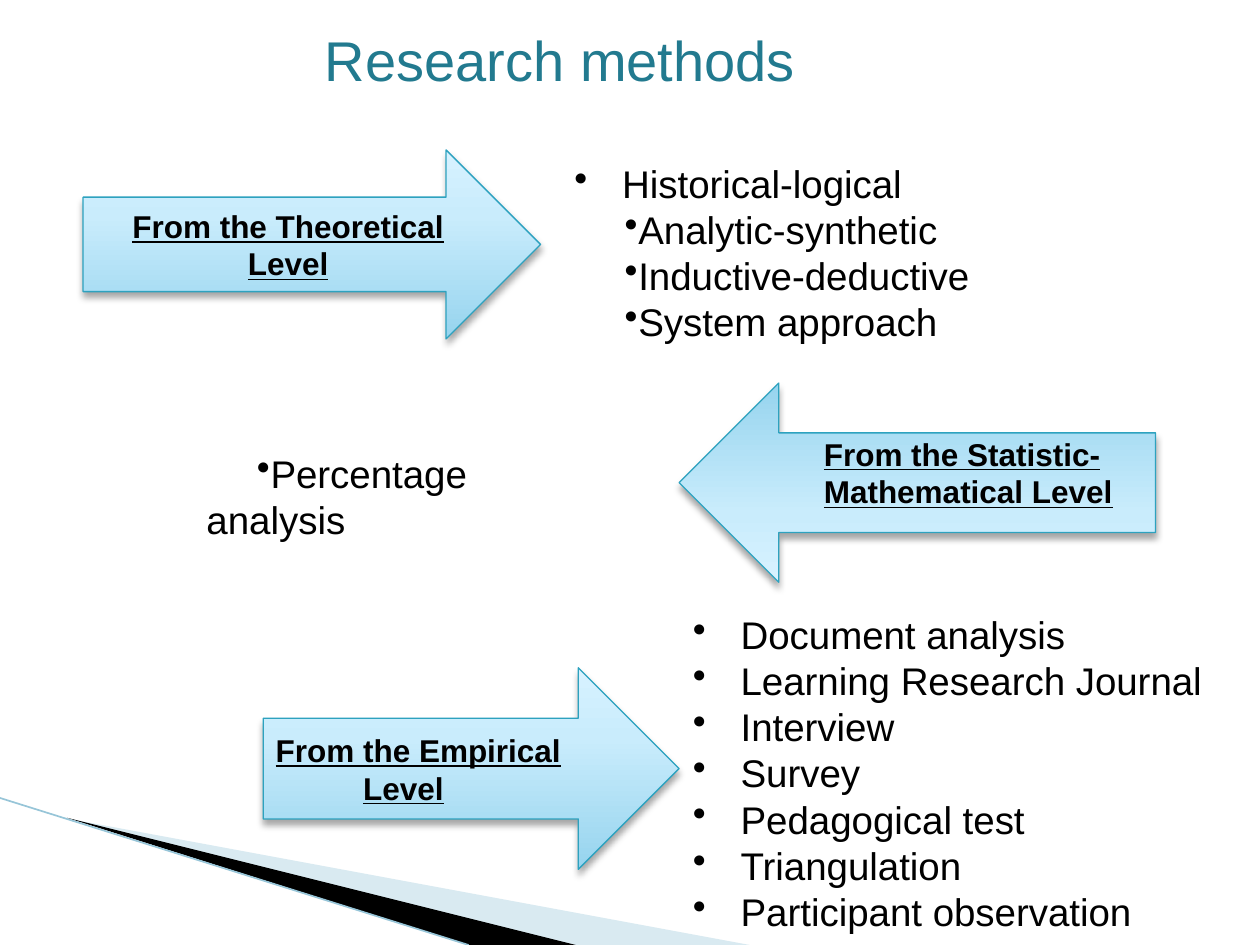
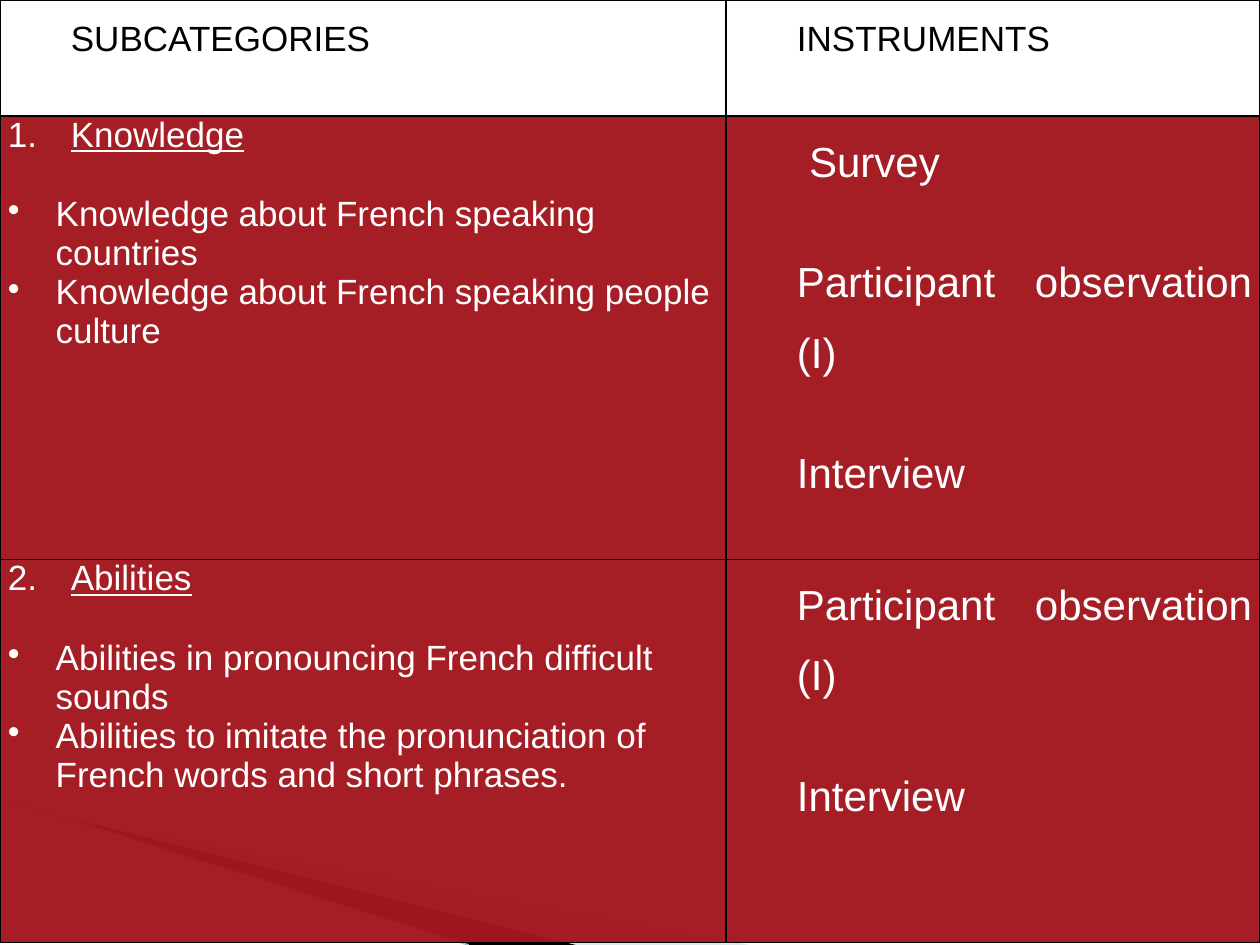
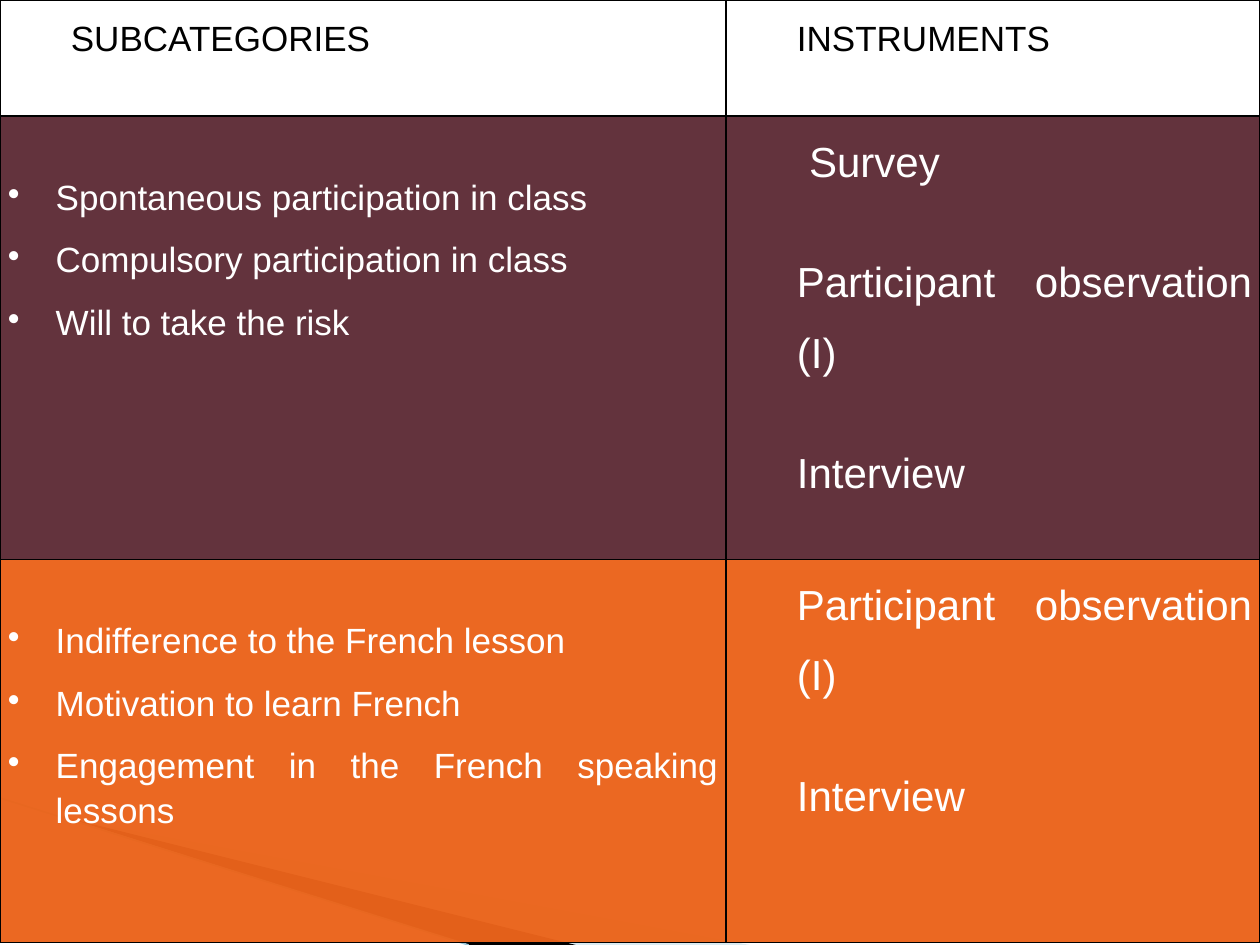
from dataclasses import dataclass

from pptx import Presentation
from pptx.dml.color import RGBColor
from pptx.enum.shapes import MSO_CONNECTOR as Connector, MSO_SHAPE as Preset
from pptx.enum.text import PP_ALIGN as Align
from pptx.oxml import parse_xml
from pptx.oxml.ns import nsdecls, qn
from pptx.util import Pt

FONT = "Arial"
BLACK = RGBColor(0x00, 0x00, 0x00)
WHITE = RGBColor(0xFF, 0xFF, 0xFF)
TEAL = RGBColor(0x22, 0x7A, 0x8F)
ARROW_EDGE = RGBColor(0x2D, 0xA2, 0xBF)
PALE_BLUE = RGBColor(0xA0, 0xCB, 0xDC)
EDGE_BLUE = RGBColor(0x97, 0xC5, 0xD8)
RED = RGBColor(0xA3, 0x17, 0x1E)
PLUM = RGBColor(0x5E, 0x2D, 0x37)
ORANGE = RGBColor(0xEB, 0x64, 0x1B)
ARROW_STOPS = (
    (0, RGBColor(0x96, 0xD4, 0xEE)),
    (65, RGBColor(0xC9, 0xEC, 0xFC)),
    (100, RGBColor(0xD7, 0xF2, 0xFF)),
)

WIDTH, HEIGHT = 720, 540
HANGING = dict(left=27.36, first=-27.36, bullet="•")
INDENTED = dict(first=28.8, bullet="•")
METHOD = dict(size=22, align=Align.JUSTIFY)
LEVEL = dict(size=18, bold=True, underline=True)
SPACED = dict(align=Align.JUSTIFY, left=36, spacing=1.5, before=14.4, after=14.4)


@dataclass
class Wedge:
    points: tuple[tuple[float, float], ...]
    color: RGBColor
    opacity: int


@dataclass
class Arrow:
    left: float
    top: float
    width: float
    height: float
    rotation: int = 0


@dataclass
class Category:
    points: list[str]
    instruments: list[str]
    color: RGBColor
    heading: str = ""
    number: int = 0


WEDGES = (
    Wedge(((39.6, 468), (428.4, HEIGHT), (328.3, HEIGHT)), PALE_BLUE, 40),
    Wedge(((38.2, 467.3), (329, HEIGHT), (267.8, HEIGHT)), BLACK, 100),
)
THEORETICAL = Arrow(47.5, 85.7, 261.4, 108)
STATISTIC = Arrow(388.1, 218.9, 272.2, 113.8, 180)
EMPIRICAL = Arrow(150.5, 381.6, 237.6, 115.2)

OBSERVATION = ["Participant observation (I)", "Interview"]
SURVEYED = ["Survey", *OBSERVATION]
TABLES = (
    (
        Category(["Knowledge about French speaking countries",
                  "Knowledge about French speaking people culture"],
                 SURVEYED, RED, "Knowledge", 1),
        Category(["Abilities in pronouncing French difficult sounds",
                  "Abilities to imitate the pronunciation of French words and short phrases."],
                 OBSERVATION, RED, "Abilities", 2),
    ),
    (
        Category(["Spontaneous participation in class",
                  "Compulsory participation in class",
                  "Will to take the risk"], SURVEYED, PLUM),
        Category(["Indifference to the French lesson",
                  "Motivation to learn French",
                  "Engagement in the French speaking lessons"], OBSERVATION, ORANGE),
    ),
)


def write(frame, *lines: str, size: float = 20, color: RGBColor = BLACK,
          bold: bool = False, underline: bool = False, align: Align = Align.LEFT,
          left: float = 0, first: float = 0, bullet: str = "", number: int = 0,
          spacing: float = 1, before: float = 0, after: float = 0) -> None:
    for line in lines:
        opening = not frame.text
        paragraph = frame.paragraphs[0] if opening else frame.add_paragraph()
        properties = paragraph._p.get_or_add_pPr()
        properties.set("marL", str(Pt(left)))
        properties.set("indent", str(Pt(first)))
        if number:
            properties.append(parse_xml(
                f'<a:buAutoNum {nsdecls("a")} type="arabicPeriod" startAt="{number}"/>'))
        elif bullet:
            properties.append(parse_xml(f'<a:buChar {nsdecls("a")} char="{bullet}"/>'))
        paragraph.alignment = align
        paragraph.line_spacing = spacing
        paragraph.space_before = Pt(0 if opening else before)
        paragraph.space_after = Pt(after)
        run = paragraph.add_run()
        run.text = line
        run.font.name = FONT
        run.font.size = Pt(size)
        run.font.bold = bold
        run.font.underline = underline
        run.font.color.rgb = color


def paint(fill, properties, color: RGBColor, opacity: int) -> None:
    fill.solid()
    fill.fore_color.rgb = color
    if opacity < 100:
        properties.find(f'{qn("a:solidFill")}/{qn("a:srgbClr")}').append(
            parse_xml(f'<a:alpha {nsdecls("a")} val="{opacity * 1000}"/>'))


def add_base(deck):
    slide = deck.slides.add_slide(deck.slide_layouts[6])
    for wedge in WEDGES:
        start, *rest = [(Pt(x), Pt(y)) for x, y in wedge.points]
        builder = slide.shapes.build_freeform(*start)
        builder.add_line_segments(rest)
        band = builder.convert_to_shape()
        paint(band.fill, band.element.spPr, wedge.color, wedge.opacity)
        band.line.fill.background()
        band.shadow.inherit = False
    edge = slide.shapes.add_connector(
        Connector.STRAIGHT, Pt(0), Pt(456), Pt(267.8), Pt(HEIGHT))
    edge.line.color.rgb = EDGE_BLUE
    edge.line.width = Pt(0.95)
    edge.element.spPr.append(parse_xml(f'<a:effectLst {nsdecls("a")}/>'))
    return slide


def add_arrow(slide, arrow: Arrow):
    shape = slide.shapes.add_shape(Preset.RIGHT_ARROW, Pt(arrow.left), Pt(arrow.top),
                                   Pt(arrow.width), Pt(arrow.height))
    shape.rotation = arrow.rotation
    shape.fill.gradient()
    shape.fill.gradient_angle = 90
    stops = shape.element.spPr.find(f'{qn("a:gradFill")}/{qn("a:gsLst")}')
    for stop in list(stops):
        stops.remove(stop)
    for position, color in ARROW_STOPS:
        stops.append(parse_xml(
            f'<a:gs {nsdecls("a")} pos="{position * 1000}"><a:srgbClr val="{color}"/></a:gs>'))
    shape.line.color.rgb = ARROW_EDGE
    shape.line.width = Pt(0.75)
    shape.shadow.inherit = False
    shape.element.spPr.find(qn("a:effectLst")).append(parse_xml(
        f'<a:outerShdw {nsdecls("a")} blurRad="{Pt(4)}" dist="{Pt(3)}" dir="5400000" '
        'rotWithShape="0"><a:srgbClr val="000000"><a:alpha val="35000"/></a:srgbClr>'
        '</a:outerShdw>'))
    return shape.text_frame


def add_text(slide, left: float, top: float, width: float, height: float,
             wrap: bool = True):
    frame = slide.shapes.add_textbox(Pt(left), Pt(top), Pt(width), Pt(height)).text_frame
    frame.word_wrap = wrap
    return frame


def format_cell(cell) -> None:
    cell.margin_left = cell.margin_right = Pt(4.5)
    cell.margin_top = cell.margin_bottom = Pt(0)
    for side in "LRTB":
        cell._tc.get_or_add_tcPr().append(parse_xml(
            f'<a:ln{side} {nsdecls("a")} w="{Pt(1)}"><a:solidFill>'
            f'<a:srgbClr val="{BLACK}"/></a:solidFill></a:ln{side}>'))
    cell.fill.background()


def write_category(topic, methods, category: Category) -> None:
    for cell in (topic, methods):
        paint(cell.fill, cell._tc.tcPr, category.color, 97)
    if category.heading:
        write(topic.text_frame, category.heading, color=WHITE, underline=True,
              left=36, first=-36, number=category.number, after=23)
        write(topic.text_frame, *category.points, color=WHITE, **HANGING)
    else:
        topic.margin_top = Pt(32.5)
        write(topic.text_frame, *category.points, color=WHITE, align=Align.JUSTIFY,
              spacing=1.15, after=10, **HANGING)
    for instrument in category.instruments:
        write(methods.text_frame, instrument, size=24, color=WHITE,
              first=7 if instrument == "Survey" else 0, **SPACED)


def build_methods(deck) -> None:
    slide = add_base(deck)
    write(add_text(slide, 178.6, 10.8, 285.1, 46, wrap=False),
          "Research methods", size=32, color=TEAL)

    write(add_arrow(slide, THEORETICAL), "From the Theoretical", "Level",
          align=Align.CENTER, **LEVEL)
    add_arrow(slide, STATISTIC)
    empirical = add_arrow(slide, EMPIRICAL)
    write(empirical, "From the Empirical", **LEVEL)
    write(empirical, "Level", left=50, **LEVEL)

    theoretical_methods = add_text(slide, 321.1, 87.8, 360, 113.8)
    write(theoretical_methods, "Historical-logical", **METHOD, **HANGING)
    write(theoretical_methods, "Analytic-synthetic", "Inductive-deductive",
          "System approach", **METHOD, **INDENTED)
    write(add_text(slide, 463.7, 244.8, 181.4, 51.1, wrap=False),
          "From the Statistic-", "Mathematical Level", **LEVEL)
    write(add_text(slide, 110.9, 253.4, 243.4, 61), "Percentage analysis",
          **METHOD, **INDENTED)
    write(add_text(slide, 388.8, 345.6, 360, 196.6),
          "Document analysis", "Learning Research Journal", "Interview", "Survey",
          "Pedagogical test", "Triangulation", "Participant observation",
          **METHOD, **HANGING)


def build_table(deck, categories: tuple[Category, ...]) -> None:
    slide = add_base(deck)
    table = slide.shapes.add_table(3, 2, Pt(0), Pt(0), Pt(WIDTH), Pt(538.6)).table
    table.first_row = table.horz_banding = False
    for column, width in zip(table.columns, (414.9, 305.1)):
        column.width = Pt(width)
    for row, height in zip(table.rows, (66.2, 253.4, 219)):
        row.height = Pt(height)
    for cell in table.iter_cells():
        format_cell(cell)
    for column, title in enumerate(("SUBCATEGORIES", "INSTRUMENTS")):
        write(table.cell(0, column).text_frame, title, **SPACED)
    for row, category in enumerate(categories, start=1):
        write_category(table.cell(row, 0), table.cell(row, 1), category)


def main() -> None:
    deck = Presentation()
    deck.slide_width, deck.slide_height = Pt(WIDTH), Pt(HEIGHT)
    build_methods(deck)
    for categories in TABLES:
        build_table(deck, categories)
    deck.save("out.pptx")


if __name__ == "__main__":
    main()
